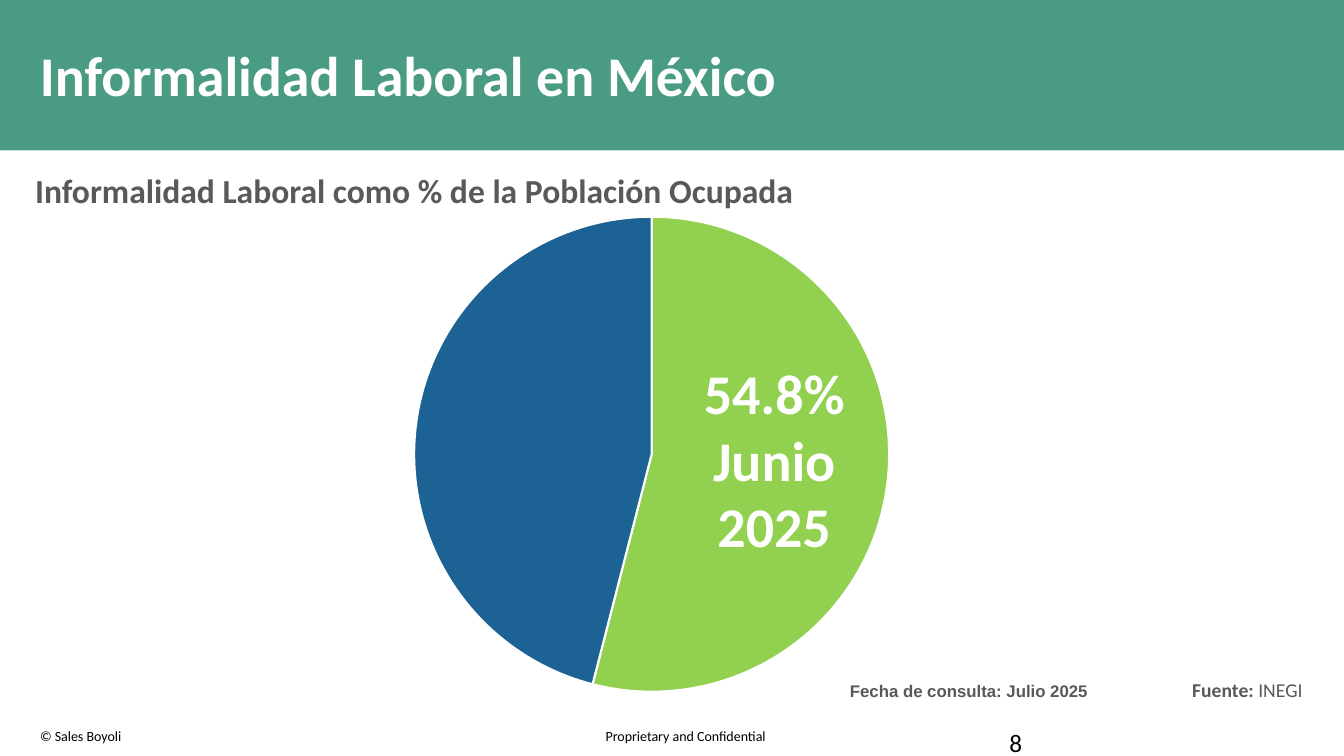
from lxml.etree import SubElement
from pptx import Presentation
from pptx.chart.data import CategoryChartData
from pptx.dml.color import RGBColor
from pptx.enum.chart import XL_CHART_TYPE
from pptx.enum.shapes import MSO_SHAPE
from pptx.enum.text import MSO_ANCHOR, PP_ALIGN
from pptx.oxml.ns import qn
from pptx.util import Pt

WHITE, BLACK, GRAY = "FFFFFF", "000000", "595959"
BANNER_GREEN, LIME, BLUE = "4A9B83", "92D050", "1D6294"


def color(hex_string):
    return RGBColor.from_string(hex_string)


class SlideBuilder:
    def __init__(self, slide, font_name="Calibri"):
        self.slide = slide
        self.font_name = font_name

    def style_font(self, font, fill, **values):
        for name, value in {"name": self.font_name, **values}.items():
            setattr(font, name, value)
        font.color.rgb = color(fill)

    def rectangle(self, box, fill):
        shape = self.slide.shapes.add_shape(MSO_SHAPE.RECTANGLE, *map(Pt, box))
        shape.shadow.inherit = False
        shape.fill.solid()
        shape.fill.fore_color.rgb = color(fill)
        shape.line.fill.background()

    def text(self, box, paragraphs, size, fill, inset=None, wrap=True,
             anchor=MSO_ANCHOR.TOP, paragraph_format=None, **font_values):
        """Add a text box; each paragraph is a list of (text, bold) runs."""
        frame = self.slide.shapes.add_textbox(*map(Pt, box)).text_frame
        frame.word_wrap = wrap
        frame.vertical_anchor = anchor
        if inset is not None:
            for side in ("left", "top", "right", "bottom"):
                setattr(frame, f"margin_{side}", Pt(inset))
        for index, runs in enumerate(paragraphs):
            paragraph = frame.add_paragraph() if index else frame.paragraphs[0]
            for name, value in (paragraph_format or {}).items():
                setattr(paragraph, name, value)
            for words, bold in runs:
                run = paragraph.add_run()
                run.text = words
                self.style_font(run.font, fill, size=Pt(size), bold=bold, **font_values)

    def pie(self, box, values, fills, plot_area):
        """Add a pie; plot_area gives x, y, w and h as shares of the box."""
        data = CategoryChartData()
        data.categories = [str(number) for number in range(1, len(values) + 1)]
        data.add_series("Series 1", values)
        chart = self.slide.shapes.add_chart(XL_CHART_TYPE.PIE, *map(Pt, box), data).chart
        chart.has_legend = False
        chart.has_title = False
        self.style_font(chart.font, BLACK, size=Pt(10))
        plot = chart.plots[0]
        plot.vary_by_categories = True
        for index, fill in enumerate(fills):
            point_format = plot.series[0].points[index].format
            point_format.fill.solid()
            point_format.fill.fore_color.rgb = color(fill)
            point_format.line.color.rgb = color(WHITE)
            point_format.line.width = Pt(1.5)

        area = chart.element.find(".//" + qn("c:plotArea"))
        layout = area.find(qn("c:layout"))
        if layout is None:
            layout = SubElement(area, qn("c:layout"))
            area.insert(0, layout)
        manual = SubElement(layout, qn("c:manualLayout"))
        settings = {"layoutTarget": "inner", "xMode": "edge", "yMode": "edge", **plot_area}
        for name, value in settings.items():
            SubElement(manual, qn(f"c:{name}")).set("val", str(value))


def main():
    presentation = Presentation()
    presentation.slide_width, presentation.slide_height = Pt(960), Pt(540)
    builder = SlideBuilder(presentation.slides.add_slide(presentation.slide_layouts[6]))

    builder.text((425.5, 516, 130.5, 19.5), [[("Proprietary and Confidential", False)]],
                 10, BLACK, wrap=False)
    builder.text((21.5, 516, 242.5, 19.5), [[("© Sales Boyoli", False)]], 10, BLACK)
    builder.rectangle((0, 0, 960, 107.5), BANNER_GREEN)
    builder.text((714, 516, 224, 18), [[("8", False)]], 18, BLACK)
    builder.text((21.5, 10, 916, 91.5), [[("Informalidad Laboral en México", True)]],
                 40, WHITE, anchor=MSO_ANCHOR.MIDDLE, paragraph_format={"line_spacing": 0.9})
    builder.text((21.5, 117.5, 692, 36),
                 [[("Informalidad Laboral como % de la Población Ocupada", True)]],
                 24, GRAY, inset=3.6)
    builder.text((603.5, 483, 255.5, 21.5), [[("Fecha de consulta: Julio 2025", True)]],
                 12, GRAY, inset=3.6, name="Arial")
    builder.text((844.5, 481, 93.5, 41), [[("Fuente:", True), (" INEGI", False)]],
                 14, GRAY, wrap=False)

    builder.pie((229, 144, 473, 361), (54, 46), (LIME, BLUE),
                {"x": 0.14, "y": 0.03, "w": 0.72, "h": 0.94})
    builder.text((480, 252.5, 146, 152.5),
                 [[(line, True)] for line in ("54.8%", "Junio", "2025")], 40, WHITE,
                 paragraph_format={"alignment": PP_ALIGN.CENTER, "line_spacing": Pt(47.8)})

    presentation.save("out.pptx")


if __name__ == "__main__":
    main()
